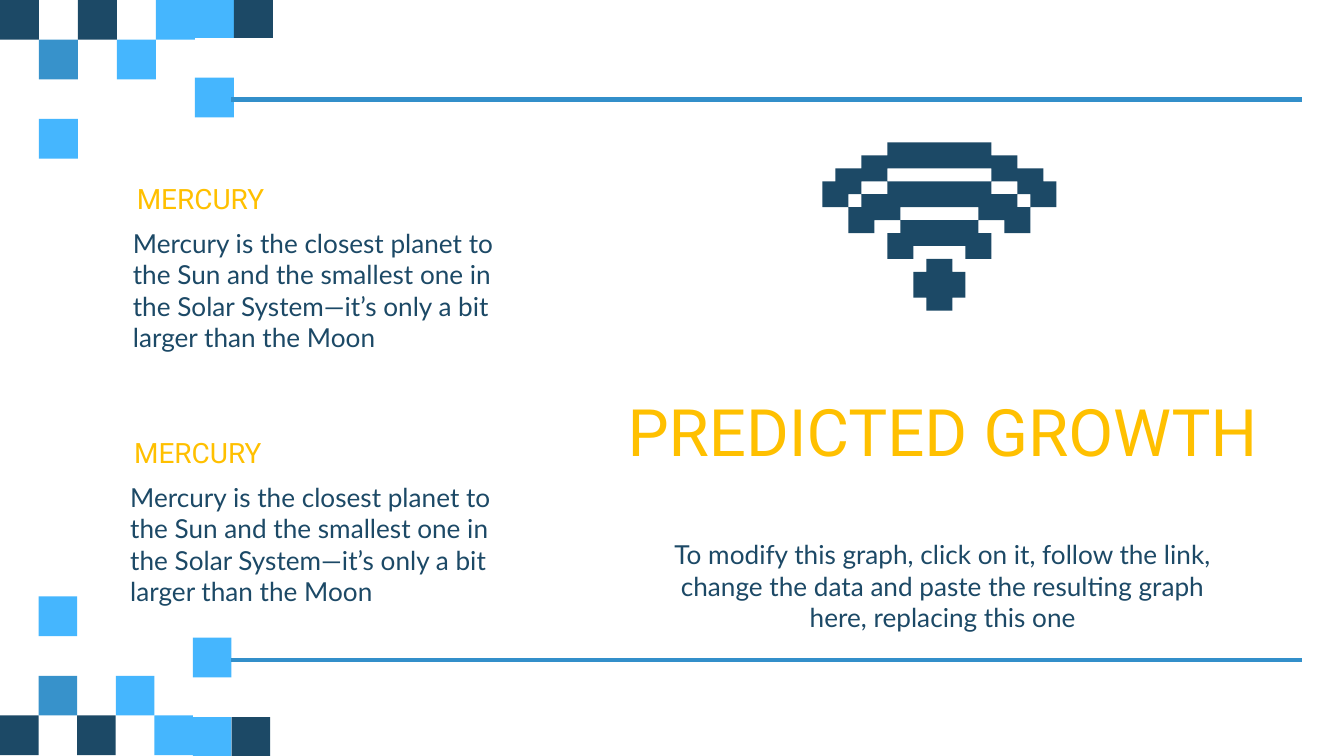
from lxml import etree
from pptx import Presentation
from pptx.dml.color import RGBColor
from pptx.enum.shapes import MSO_CONNECTOR, MSO_SHAPE
from pptx.enum.text import MSO_ANCHOR, MSO_AUTO_SIZE, PP_ALIGN
from pptx.oxml.ns import qn
from pptx.util import Inches, Pt

RECTANGLE, STRAIGHT = MSO_SHAPE.RECTANGLE, MSO_CONNECTOR.STRAIGHT
TOP, MIDDLE = MSO_ANCHOR.TOP, MSO_ANCHOR.MIDDLE
LEFT, CENTER = PP_ALIGN.LEFT, PP_ALIGN.CENTER
NO_AUTOFIT = MSO_AUTO_SIZE.NONE
WIDTH = Inches(10)
HEIGHT = WIDTH * 9 // 16
TITLE_ONLY = 5
NAVY, BLUE, SKY, RULE, GOLD = "1C4966", "3792CB", "45B6FE", "328FCA", "FFC000"

TILE_COLUMNS, TILE_ROWS = 7, 4
TILES = [
    (1, 1, BLUE), (3, 1, SKY), (5, 0, SKY), (0, 0, NAVY), (2, 0, NAVY),
    (4, 0, SKY), (6, 0, NAVY), (5, 2, SKY), (1, 3, SKY),
]
NUDGED_COLUMN = 5

ICON_COLUMNS, ICON_ROWS = 18, 13
WAVES = [
    (4, 7), (2, 7), (2, 5), (0, 5), (0, 3), (1, 3), (1, 2), (3, 2), (3, 1),
    (5, 1), (5, 0), (13, 0), (13, 1), (15, 1), (15, 2), (17, 2), (17, 3),
    (18, 3), (18, 5), (16, 5), (16, 7), (14, 7), (14, 6), (12, 6), (12, 7),
    (13, 7), (13, 9), (11, 9), (11, 8), (7, 8), (7, 9), (5, 9), (5, 7),
    (6, 7), (6, 6), (4, 6),
]
GAPS = [(5, 2, 13, 3), (3, 3, 5, 4), (13, 3, 15, 4),
        (2, 4, 3, 5), (15, 4, 16, 5), (6, 5, 12, 6)]
DOT = [
    (8, 12), (7, 12), (7, 10), (8, 10), (8, 9), (10, 9), (10, 10),
    (11, 10), (11, 12), (10, 12), (10, 13), (8, 13),
]
MERCURY = ("Mercury is the closest planet to the Sun and the smallest one in "
           "the Solar System—it’s only a bit larger than the Moon")
CAPTION = ("To modify this graph, click on it, follow the link, change the data "
           "and paste the resulting graph here, replacing this one")


def color(value):
    """Turn a hex string into a colour."""
    return RGBColor.from_string(value)


def area(left, top, width, height):
    """Turn percentages of the slide into a box."""
    return (int(WIDTH * left / 100), int(HEIGHT * top / 100),
            int(WIDTH * width / 100), int(HEIGHT * height / 100))


def part(box, left, top, width, height):
    """Return a box given as shares of another box."""
    return (int(box[0] + box[2] * left), int(box[1] + box[3] * top),
            int(box[2] * width), int(box[3] * height))


def paint(shape, fill):
    """Give a shape a flat fill without line or shadow."""
    shape.fill.solid()
    shape.fill.fore_color.rgb = color(fill)
    shape.line.fill.background()
    shape.shadow.inherit = False


def write(shape, text, font, size, fill, align=LEFT, anchor=MIDDLE, spacing=None):
    """Set and format the text of a shape."""
    frame = shape.text_frame
    frame.text = text
    frame.word_wrap = True
    frame.auto_size = NO_AUTOFIT
    frame.vertical_anchor = anchor
    frame.margin_left = frame.margin_right = Inches(0.1)
    frame.margin_top = frame.margin_bottom = Inches(0.1)
    paragraph = frame.paragraphs[0]
    paragraph.alignment = align
    paragraph.line_spacing = spacing
    run = paragraph.runs[0]
    run.font.name, run.font.size = font, Pt(size)
    run.font.color.rgb = color(fill)


def add_tiles(slide, box, flipped=False):
    """Scatter square tiles in a corner, upside down when flipped."""
    width, height = 1 / TILE_COLUMNS, 1 / TILE_ROWS
    for column, row, fill in TILES:
        nudge = -0.01 if column >= NUDGED_COLUMN else 0
        top = row * height + nudge
        if flipped:
            top = 1 - height - top
        tile = slide.shapes.add_shape(
            RECTANGLE, *part(box, column * width, top, width, height))
        paint(tile, fill)


def add_rule(slide, box):
    """Draw a horizontal line along the top of a box."""
    left, top, width, _ = box
    rule = slide.shapes.add_connector(STRAIGHT, left, top, left + width, top)
    rule.line.color.rgb = color(RULE)
    rule.line.width = Pt(2.25)
    etree.SubElement(rule._element.spPr, qn("a:effectLst"))


def add_title(slide, box, text):
    """Place and format the title placeholder."""
    title = slide.shapes.title
    title.left, title.top, title.width, title.height = box
    write(title, text, "Roboto", 35, GOLD, CENTER)


def add_section(slide, box, heading, body):
    """Place a heading above its paragraph."""
    heading_box = slide.shapes.add_textbox(*part(box, 0.01, 0, 0.81, 0.21))
    write(heading_box, heading, "Roboto", 15, GOLD, spacing=1.15)
    body_box = slide.shapes.add_textbox(*part(box, 0, 0.22, 1, 0.78))
    write(body_box, body, "Lato", 14, NAVY)


def add_caption(slide, box, text):
    """Place the centred caption."""
    caption = slide.shapes.add_textbox(*box)
    write(caption, text, "Lato", 14, NAVY, CENTER, TOP)


def add_signal_icon(slide, box):
    """Draw a pixelated wireless signal on a grid that fills the box."""
    left, top, width, height = box
    scale = (width / ICON_COLUMNS, height / ICON_ROWS)
    holes = [[(x1, y1), (x1, y2), (x2, y2), (x2, y1)] for x1, y1, x2, y2 in GAPS]
    for outline, cutouts in ((WAVES, holes), (DOT, [])):
        builder = slide.shapes.build_freeform(*outline[0], scale=scale)
        builder.add_line_segments(outline[1:], close=True)
        for cutout in cutouts:
            builder.move_to(*cutout[0])
            builder.add_line_segments(cutout[1:], close=True)
        paint(builder.convert_to_shape(left, top), NAVY)


def main():
    """Build and save the slide."""
    presentation = Presentation()
    presentation.slide_width, presentation.slide_height = WIDTH, HEIGHT
    slide = presentation.slides.add_slide(presentation.slide_layouts[TITLE_ONLY])
    add_tiles(slide, area(0, 0, 20.3, 21))
    add_tiles(slide, area(0, 78.9, 20.1, 21), flipped=True)
    for top in (13.17, 87.3):
        add_rule(slide, area(17.2, top, 79.7, 0))
    add_title(slide, area(40.3, 47.65, 59.7, 18.5), "PREDICTED GROWTH")
    add_caption(slide, area(49.1, 69.5, 42.1, 7.65), CAPTION)
    for left, top in ((8.9, 23.3), (8.7, 56.9)):
        add_section(slide, area(left, top, 29.9, 24.7), "MERCURY", MERCURY)
    add_signal_icon(slide, area(61.2, 18.85, 17.4, 22.25))
    presentation.save("out.pptx")


if __name__ == "__main__":
    main()
